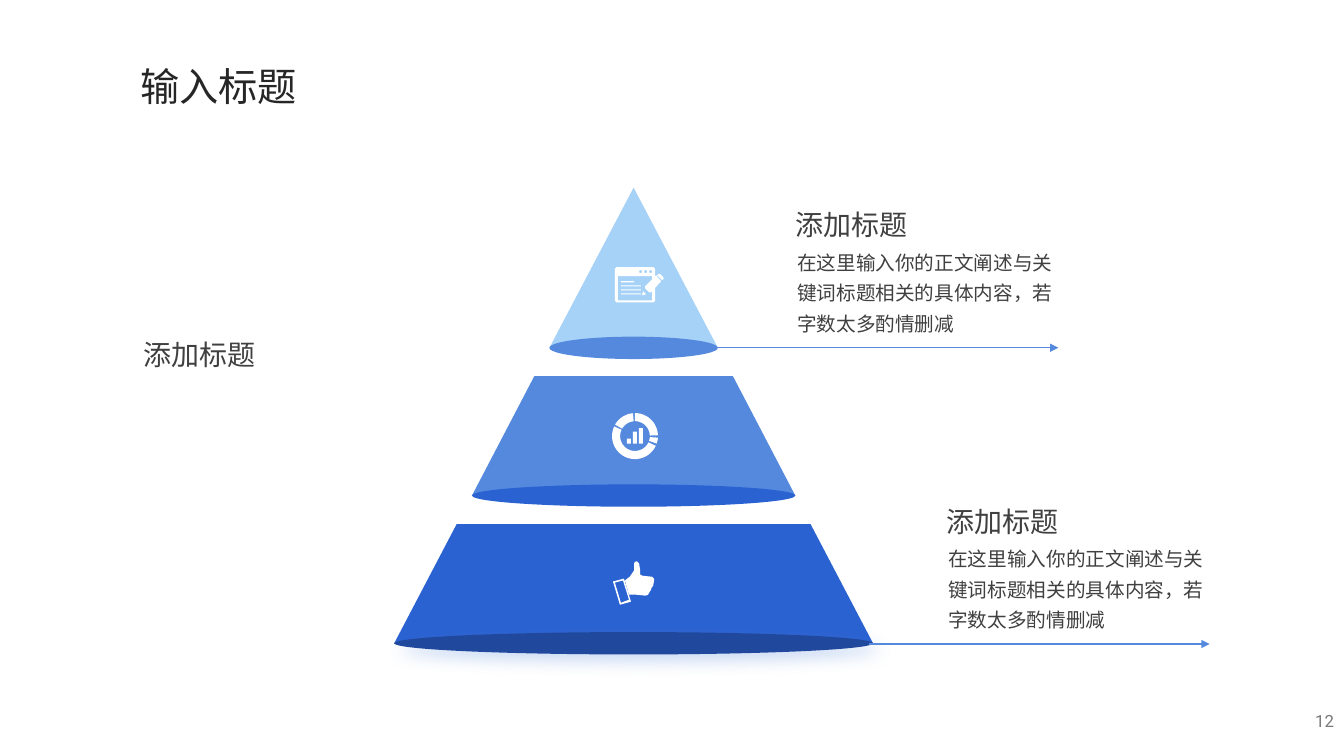
"""Build a slide with a three-tier pyramid, icons and two arrowed notes."""
from math import cos, radians, sin

from lxml.etree import SubElement
from pptx import Presentation
from pptx.dml.color import RGBColor
from pptx.enum.shapes import MSO_CONNECTOR, MSO_SHAPE
from pptx.enum.text import MSO_ANCHOR, MSO_AUTO_SIZE, PP_ALIGN
from pptx.oxml.ns import qn
from pptx.util import Pt

WHITE = RGBColor(0xFF, 0xFF, 0xFF)
SKY = RGBColor(0xA7, 0xD2, 0xF8)
BLUE = RGBColor(0x54, 0x89, 0xDD)
ROYAL = RGBColor(0x2B, 0x62, 0xD1)
NAVY = RGBColor(0x20, 0x49, 0x9D)
TITLE_INK = RGBColor(0x26, 0x26, 0x26)
BODY_INK = RGBColor(0x40, 0x40, 0x40)
NUMBER_INK = RGBColor(0x79, 0x79, 0x79)
CHINESE_FONT = "Noto Sans CJK SC"


def write_text(shape, box, text, size, color, font_name=CHINESE_FONT, margin=None):
    shape.left, shape.top, shape.width, shape.height = [Pt(value) for value in box]
    frame = shape.text_frame
    frame.word_wrap = True
    frame.vertical_anchor = MSO_ANCHOR.TOP
    if margin is not None:
        frame.margin_left = frame.margin_right = Pt(margin)
        frame.margin_top = frame.margin_bottom = Pt(margin)
    paragraph = frame.paragraphs[0]
    paragraph.alignment = PP_ALIGN.LEFT
    run = paragraph.add_run()
    run.text = text
    run.font.size = Pt(size)
    run.font.color.rgb = color
    run.font.name = font_name
    SubElement(run._r.get_or_add_rPr(), qn("a:ea"), typeface=font_name)
    return frame


def draw_shape(shapes, color, *contours, preset=None, box=None):
    if preset is not None:
        shape = shapes.add_shape(preset, *[Pt(value) for value in box])
    else:
        outlines = [[(Pt(x), Pt(y)) for x, y in contour] for contour in contours]
        builder = shapes.build_freeform(*outlines[0][0])
        builder.add_line_segments(outlines[0][1:], close=True)
        for outline in outlines[1:]:
            builder.move_to(*outline[0])
            builder.add_line_segments(outline[1:], close=True)
        shape = builder.convert_to_shape()
    shape.fill.solid()
    shape.fill.fore_color.rgb = color
    shape.line.fill.background()
    shape.shadow.inherit = False
    return shape


presentation = Presentation()
presentation.slide_width = Pt(960)
presentation.slide_height = Pt(540)
slide = presentation.slides.add_slide(presentation.slide_layouts[5])

title_frame = write_text(slide.shapes.title, (92.9, 41, 127.4, 41), "输入标题", 28, TITLE_INK)
title_frame.word_wrap = False
title_frame.auto_size = MSO_AUTO_SIZE.SHAPE_TO_FIT_TEXT

CENTER = 452.6
TIERS = [
    (134, 248.5, 0, 60.2, SKY, BLUE),
    (268.6, 354, 70.9, 115.5, BLUE, ROYAL),
    (374.4, 459.5, 126.4, 171, ROYAL, NAVY),
]
for top, bottom, top_half, bottom_half, face_color, base_color in TIERS:
    face = [(CENTER - top_half, top), (CENTER + top_half, top),
            (CENTER + bottom_half, bottom), (CENTER - bottom_half, bottom)]
    draw_shape(slide.shapes, face_color, face)
    base = draw_shape(slide.shapes, base_color, preset=MSO_SHAPE.OVAL,
                      box=(CENTER - bottom_half, bottom - 8, 2 * bottom_half, 16))

effects = base._element.spPr.find(qn("a:effectLst"))
shadow = SubElement(effects, qn("a:outerShdw"), blurRad=str(Pt(12)), dist=str(Pt(6)),
                    dir="2700000", algn="tl", rotWithShape="0")
shadow_color = SubElement(shadow, qn("a:srgbClr"), val=str(BLUE))
SubElement(shadow_color, qn("a:alpha"), val="30000")

NOTE = "在这里输入你的正文阐述与关键词标题相关的具体内容，若字数太多酌情删减"
for start, level in [(512.6, 248.4), (620.6, 460)]:
    arrow = slide.shapes.add_connector(MSO_CONNECTOR.STRAIGHT, Pt(start), Pt(level),
                                       Pt(start + 243.4), Pt(level))
    arrow.line.color.rgb = BLUE
    arrow.line.width = Pt(1)
    SubElement(arrow.line._get_or_add_ln(), qn("a:tailEnd"), type="triangle")
    SubElement(arrow._element.spPr, qn("a:effectLst"))
    heading = slide.shapes.add_textbox(0, 0, 0, 0)
    write_text(heading, (start + 55.5, level - 100, 150, 29), "添加标题", 20, BODY_INK, margin=0)
    note = slide.shapes.add_textbox(0, 0, 0, 0)
    note_frame = write_text(note, (start + 49.7, level - 77.8, 206, 65), NOTE, 14, BODY_INK)
    note_frame.paragraphs[0].line_spacing = 1.3

side_heading = slide.shapes.add_textbox(0, 0, 0, 0)
write_text(side_heading, (102.2, 241.2, 145.4, 29), "添加标题", 20, BODY_INK, margin=0)

window_icon = slide.shapes.add_group_shape().shapes
window_frame = [(440.4, 190.8), (466.8, 190.8), (468, 192), (468, 214.8),
                (466.8, 216), (440.4, 216), (439.2, 214.8), (439.2, 192)]
window_page = [(441.4, 197.3), (441.4, 214.6), (465.8, 214.6), (465.8, 197.3)]
buttons = [[(x + 1.1 * cos(radians(angle)), 194 + 1.1 * sin(radians(angle)))
            for angle in range(0, 360, 30)] for x in (457.6, 461.2, 464.8)]
draw_shape(window_icon, WHITE, window_frame, window_page, *buttons)
pencil_tip = [(459.4, 208.1), (458.6, 211), (461.5, 210.2)]
pencil_eraser = [(473, 200.2), (474.1, 199.1), (473.8, 198), (471.6, 195.8),
                 (470.2, 195.8), (469.4, 196.6)]
pencil_body = [(468.7, 196.6), (460.8, 204.5), (460.8, 205.9), (463.7, 208.8),
               (465.1, 208.8), (472.3, 200.9)]
for outline in (pencil_tip, pencil_eraser, pencil_body):
    draw_shape(window_icon, WHITE, outline)
for row, width in enumerate([9.4, 14.4, 14.4, 14.4]):
    draw_shape(window_icon, WHITE, preset=MSO_SHAPE.RECTANGLE,
               box=(443.5, 200.9 + 2.9 * row, width, 0.8))

chart_icon = slide.shapes.add_group_shape().shapes
for first, last in [(25, 205), (210, 265), (270, 358), (4, 19)]:
    angles = [radians(first + (last - first) * step / 24) for step in range(25)]
    ring = [(453.6 + 16.4 * cos(angle), 311.5 + 16.4 * sin(angle)) for angle in angles]
    ring += [(453.6 + 10.6 * cos(angle), 311.5 + 10.6 * sin(angle)) for angle in angles[::-1]]
    draw_shape(chart_icon, WHITE, ring)
for column, height in enumerate([3.6, 8.6, 11]):
    draw_shape(chart_icon, WHITE, preset=MSO_SHAPE.RECTANGLE,
               box=(447.8 + 4.3 * column, 316.9 - height, 2.9, height))

thumb_icon = slide.shapes.add_group_shape().shapes
cuff_edge = [(445.7, 413.3), (437.8, 415.4), (442.8, 432), (450.7, 429.8)]
cuff_hole = [(445, 414.7), (449.3, 428.4), (443.5, 430.6), (439.2, 416.2)]
hand = [(466.6, 418.3), (465.1, 420.5), (465.1, 421.2), (463.7, 423.4), (462.8, 425),
        (460.8, 425.5), (454.3, 424.8), (449.3, 424.8), (446.4, 414.7), (450, 411.8),
        (452.9, 407.5), (452.9, 402.5), (453.6, 401.3), (455, 401), (456.5, 402.5),
        (457.2, 406.8), (457.2, 410.4), (459, 411.3), (463.7, 411.8), (465.8, 412),
        (467.1, 413.2), (467.3, 414.7), (466.8, 416.9)]
draw_shape(thumb_icon, WHITE, cuff_edge, cuff_hole)
draw_shape(thumb_icon, WHITE, hand)

page_number = slide.shapes.add_textbox(0, 0, 0, 0)
number_frame = write_text(page_number, (744, 500.4, 216, 28.8), "12", 12, NUMBER_INK, "Roboto")
number_frame.vertical_anchor = MSO_ANCHOR.MIDDLE
number_frame.paragraphs[0].alignment = PP_ALIGN.RIGHT

presentation.save("out.pptx")
